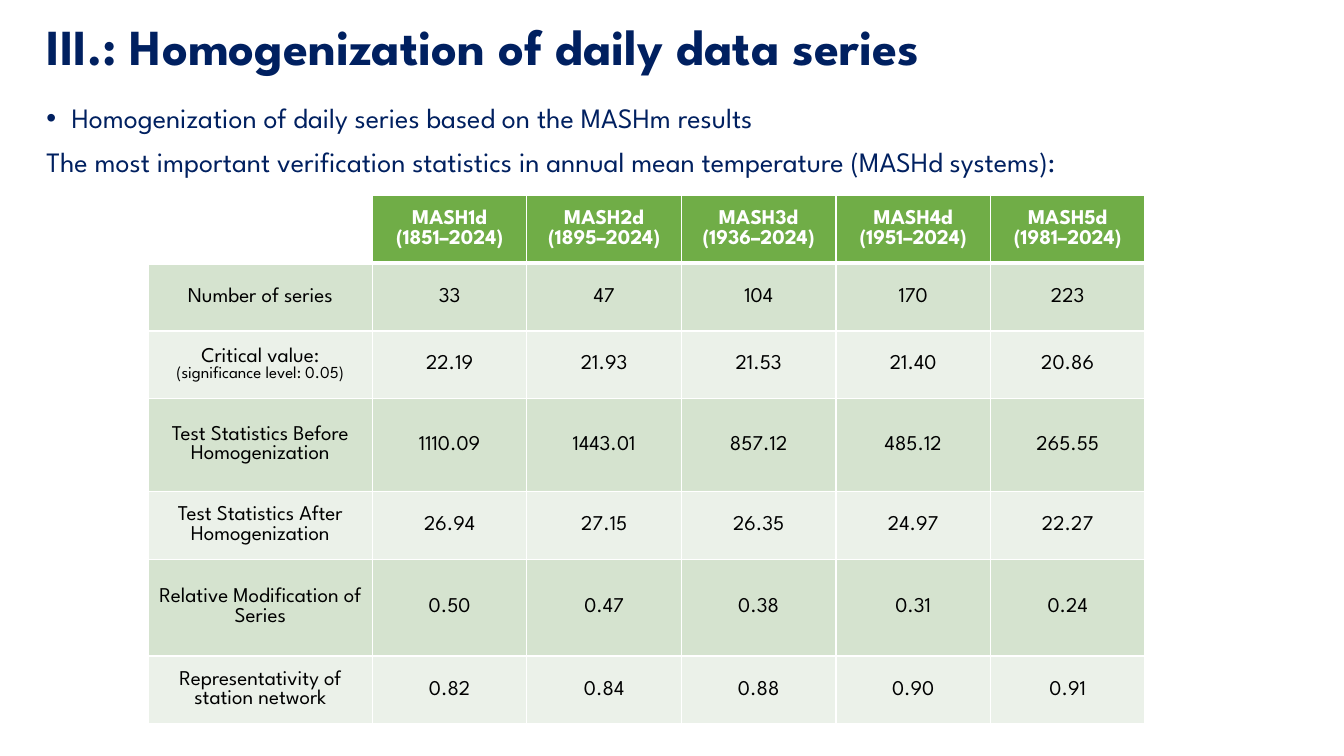
from lxml import etree
from pptx import Presentation
from pptx.dml.color import RGBColor
from pptx.enum.text import MSO_ANCHOR, PP_ALIGN
from pptx.oxml.ns import qn
from pptx.util import Pt

MIDDLE, TOP = MSO_ANCHOR.MIDDLE, MSO_ANCHOR.TOP
CENTER, LEFT = PP_ALIGN.CENTER, PP_ALIGN.LEFT

NAVY = RGBColor(0x00, 0x20, 0x60)
GREEN = RGBColor(0x70, 0xAD, 0x47)
BANDS = RGBColor(0xD5, 0xE3, 0xCF), RGBColor(0xEB, 0xF1, 0xE9)
WHITE = RGBColor(0xFF, 0xFF, 0xFF)
BLACK = RGBColor(0x00, 0x00, 0x00)
FONT = "League Spartan"

TITLE = "III.: Homogenization of daily data series"
METHOD = "Homogenization of daily series based on the MASHm results"
TABLE_CAPTION = "The most important verification statistics in annual mean temperature (MASHd systems):"
SYSTEMS = [
    ("MASH1d", "(1851–2024)"),
    ("MASH2d", "(1895–2024)"),
    ("MASH3d", "(1936–2024)"),
    ("MASH4d", "(1951–2024)"),
    ("MASH5d", "(1981–2024)"),
]
SIGNIFICANCE = "(significance level: 0.05)"
STATISTICS = [
    ("Number of series", "33", "47", "104", "170", "223"),
    ("Critical value:", "22.19", "21.93", "21.53", "21.40", "20.86"),
    ("Test Statistics Before Homogenization", "1110.09", "1443.01", "857.12", "485.12", "265.55"),
    ("Test Statistics After Homogenization", "26.94", "27.15", "26.35", "24.97", "22.27"),
    ("Relative Modification of Series", "0.50", "0.47", "0.38", "0.31", "0.24"),
    ("Representativity of station network", "0.82", "0.84", "0.88", "0.90", "0.91"),
]
LABEL_WIDTH, SYSTEM_WIDTH = 160, 110.4
ROW_HEIGHTS = [48.4, 48.4, 48.4, 66.2, 48.4, 69.2, 48.4]


def style(paragraph, size, color, bold, align):
    paragraph.alignment = align
    font = paragraph.font
    font.name, font.size, font.bold = FONT, Pt(size), bold
    font.color.rgb = color


def add_borders(cell, row):
    widths = {"a:lnL": 1, "a:lnR": 1, "a:lnT": 3 if row == 1 else 1, "a:lnB": 3 if row == 0 else 1}
    properties = cell._tc.get_or_add_tcPr()
    for position, (tag, width) in enumerate(widths.items()):
        line = etree.Element(qn(tag), w=str(Pt(width)))
        fill = etree.SubElement(line, qn("a:solidFill"))
        etree.SubElement(fill, qn("a:srgbClr"), val=str(WHITE))
        properties.insert(position, line)


def fill_cell(cell, row, lines):
    cell.vertical_anchor = MIDDLE
    if lines:
        cell.fill.solid()
        cell.fill.fore_color.rgb = BANDS[(row - 1) % 2] if row else GREEN
        cell.text = "\n".join(lines)
        for paragraph in cell.text_frame.paragraphs:
            style(paragraph, 15, BLACK if row else WHITE, row == 0, CENTER)
    else:
        cell.fill.background()
    add_borders(cell, row)


def main():
    deck = Presentation()
    deck.slide_width, deck.slide_height = Pt(960), Pt(540)
    slide = deck.slides.add_slide(deck.slide_layouts[5])

    title = slide.shapes.title
    title.left, title.top, title.width, title.height = Pt(26), Pt(0), Pt(788), Pt(71)
    title.text_frame.text = TITLE
    title.text_frame.vertical_anchor = MIDDLE
    title.text_frame.paragraphs[0].line_spacing = 0.9
    style(title.text_frame.paragraphs[0], 36, NAVY, True, LEFT)

    intro = slide.shapes.add_textbox(Pt(26), Pt(71), Pt(871), Pt(444)).text_frame
    intro.word_wrap = True
    intro.vertical_anchor = TOP
    intro.text = METHOD + "\n" + TABLE_CAPTION
    method, caption = intro.paragraphs
    method_properties = method._p.get_or_add_pPr()
    method_properties.set("marL", str(Pt(18)))
    method_properties.set("indent", str(Pt(-18)))
    etree.SubElement(method_properties, qn("a:buFont"), typeface="Arial")
    etree.SubElement(method_properties, qn("a:buChar"), char="•")
    for paragraph in intro.paragraphs:
        paragraph.line_spacing = 0.9
        style(paragraph, 20, NAVY, paragraph is caption, LEFT)
    caption.space_before = Pt(10)

    rows = [[(), *SYSTEMS]] + [[(text,) for text in statistic] for statistic in STATISTICS]
    widths = [LABEL_WIDTH] + [SYSTEM_WIDTH] * len(SYSTEMS)
    table = slide.shapes.add_table(
        len(rows), len(widths), Pt(106), Pt(139.7), Pt(sum(widths)), Pt(sum(ROW_HEIGHTS))
    ).table
    for column, width in zip(table.columns, widths):
        column.width = Pt(width)
    for row, (lines_by_cell, height) in enumerate(zip(rows, ROW_HEIGHTS)):
        table.rows[row].height = Pt(height)
        for cell, lines in zip(table.rows[row].cells, lines_by_cell):
            fill_cell(cell, row, lines)

    critical_value = table.cell(2, 0).text_frame.paragraphs[0]
    critical_value.add_line_break()
    significance = critical_value.add_run()
    significance.text = SIGNIFICANCE
    significance.font.size = Pt(12)

    deck.save("out.pptx")


if __name__ == "__main__":
    main()
